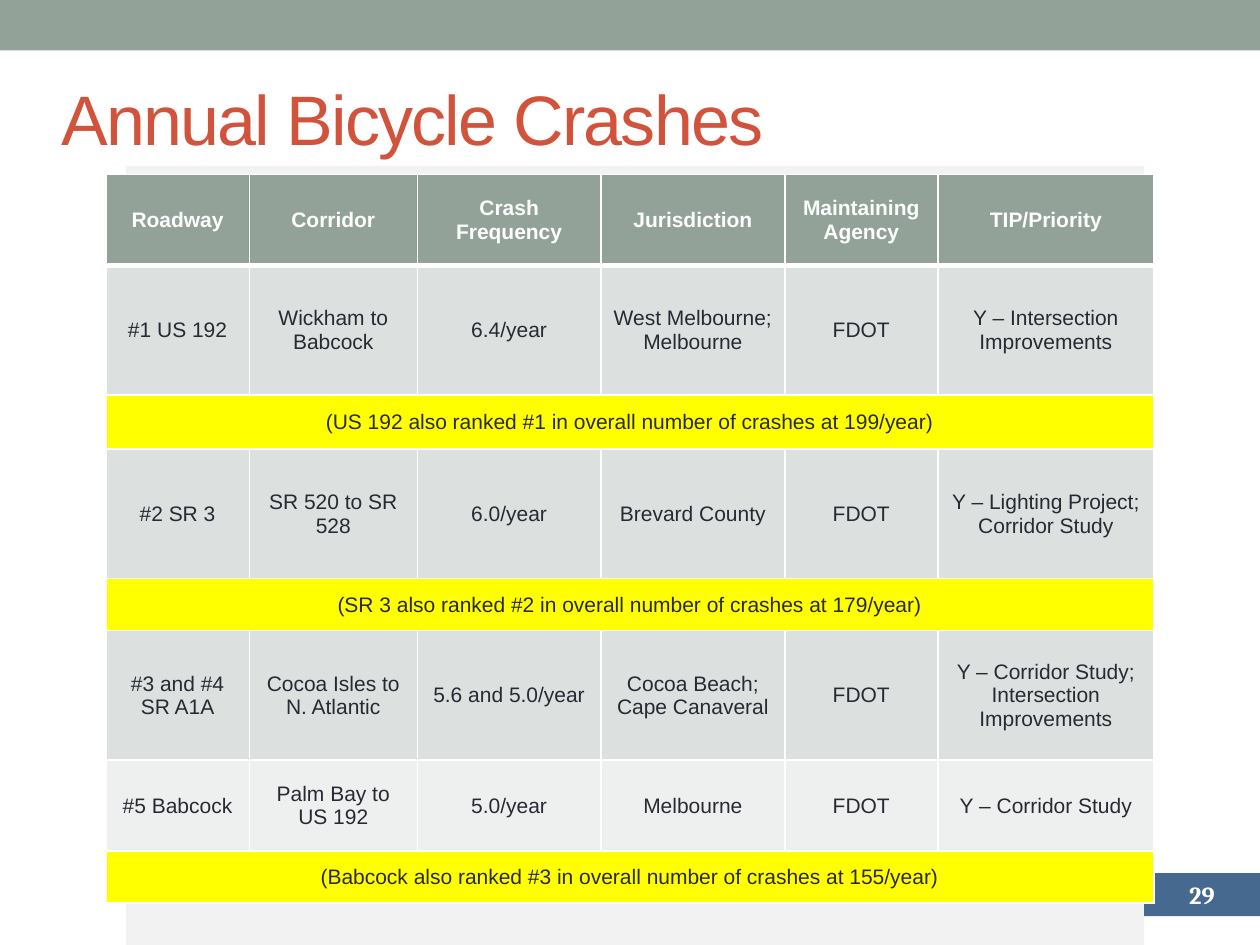
"""Build the slide that ranks corridors by annual bicycle crashes."""
from lxml import etree
from pptx import Presentation
from pptx.dml.color import RGBColor
from pptx.enum import shapes, text
from pptx.oxml import ns
from pptx.util import Pt

SAGE = RGBColor(0x93, 0xA2, 0x99)
PALE = RGBColor(0xF2, 0xF2, 0xF2)
NAVY = RGBColor(0x45, 0x69, 0x8F)
RUST = RGBColor(0xD2, 0x53, 0x3C)
INK = RGBColor(0x29, 0x29, 0x34)
WHITE = RGBColor(0xFF, 0xFF, 0xFF)
YELLOW = RGBColor(0xFF, 0xFF, 0x00)
BAND_DARK = RGBColor(0xDC, 0xE0, 0xDE)
BAND_LIGHT = RGBColor(0xEE, 0xF0, 0xEF)

TITLE = "Annual Bicycle Crashes"
PAGE = "29"
COLUMN_WIDTHS = [82, 96, 105, 105, 87.5, 123.5]
CRASH_ROWS = [
    (52, SAGE, ["Roadway", "Corridor", "Crash Frequency", "Jurisdiction",
                "Maintaining Agency", "TIP/Priority"]),
    (74, BAND_DARK, ["#1 US 192", "Wickham to Babcock", "6.4/year",
                     "West Melbourne; Melbourne", "FDOT",
                     "Y – Intersection Improvements"]),
    (31, YELLOW, ["(US 192 also ranked #1 in overall number of crashes at 199/year)"]),
    (74, BAND_DARK, ["#2 SR 3", "SR 520 to SR 528", "6.0/year", "Brevard County",
                     "FDOT", "Y – Lighting Project; Corridor Study"]),
    (29.75, YELLOW, ["(SR 3 also ranked #2 in overall number of crashes at 179/year)"]),
    (74, BAND_DARK, ["#3 and #4\nSR A1A", "Cocoa Isles to N. Atlantic",
                     "5.6 and 5.0/year", "Cocoa Beach; Cape Canaveral", "FDOT",
                     "Y – Corridor Study; Intersection Improvements"]),
    (52, BAND_LIGHT, ["#5 Babcock", "Palm Bay to US 192", "5.0/year", "Melbourne",
                      "FDOT", "Y – Corridor Study"]),
    (29.75, YELLOW, ["(Babcock also ranked #3 in overall number of crashes at 155/year)"]),
]
PANELS = [
    (SAGE, (0, 0, 720, 28.8)),
    (PALE, (72, 95, 581.75, 445)),
    (NAVY, (653.75, 499, 66.25, 24.5)),
]


def write(frame, words, size=12, font="Arial", color=INK, bold=False,
          align=text.PP_ALIGN.CENTER, spacing=None):
    frame.word_wrap = True
    paragraph = frame.paragraphs[0]
    paragraph.text = words
    paragraph.alignment = align
    for run in paragraph.runs:
        run.font.size = Pt(size)
        run.font.name = font
        run.font.bold = bold
        run.font.color.rgb = color
        if spacing is not None:
            run.font._element.set("spc", str(spacing * 100))


def add_panel(slide, color, box):
    panel = slide.shapes.add_shape(shapes.MSO_SHAPE.RECTANGLE, *map(Pt, box))
    panel.shadow.inherit = False
    panel.fill.solid()
    panel.fill.fore_color.rgb = color
    panel.line.fill.background()


def add_label(slide, words, box, **style):
    frame = slide.shapes.add_textbox(*map(Pt, box)).text_frame
    frame.vertical_anchor = text.MSO_ANCHOR.MIDDLE
    write(frame, words, **style)


def add_borders(cell, widths):
    properties = cell._tc.get_or_add_tcPr()
    for side, width in widths.items():
        line = etree.SubElement(properties, ns.qn(f"a:ln{side}"), w=str(Pt(width)))
        fill = etree.SubElement(line, ns.qn("a:solidFill"))
        etree.SubElement(fill, ns.qn("a:srgbClr"), val=str(WHITE))


def add_crash_table(slide, left, top):
    width = sum(COLUMN_WIDTHS)
    height = sum(row[0] for row in CRASH_ROWS)
    table = slide.shapes.add_table(len(CRASH_ROWS), len(COLUMN_WIDTHS), Pt(left),
                                   Pt(top), Pt(width), Pt(height)).table
    for column, column_width in zip(table.columns, COLUMN_WIDTHS):
        column.width = Pt(column_width)
    for index, (row_height, color, entries) in enumerate(CRASH_ROWS):
        row = table.rows[index]
        row.height = Pt(row_height)
        header = index == 0
        for cell in row.cells:
            add_borders(cell, {"L": 1, "R": 1, "T": 3 if index == 1 else 1,
                               "B": 3 if header else 1})
            cell.fill.solid()
            cell.fill.fore_color.rgb = color
            cell.vertical_anchor = text.MSO_ANCHOR.MIDDLE
        if len(entries) == 1:
            row.cells[0].merge(row.cells[len(COLUMN_WIDTHS) - 1])
        for cell, entry in zip(row.cells, entries):
            write(cell.text_frame, entry, color=WHITE if header else INK, bold=header)


def main():
    deck = Presentation()
    deck.slide_width, deck.slide_height = Pt(720), Pt(540)
    slide = deck.slides.add_slide(deck.slide_layouts[6])
    for color, box in PANELS:
        add_panel(slide, color, box)
    add_crash_table(slide, 60.5, 99.75)
    add_label(slide, PAGE, (671, 499, 31.75, 24.5), size=14, font="Cambria",
              color=WHITE, bold=True)
    add_label(slide, TITLE, (28, 28, 648, 78), size=40, color=RUST,
              align=text.PP_ALIGN.LEFT, spacing=-1)
    deck.save("out.pptx")


if __name__ == "__main__":
    main()
